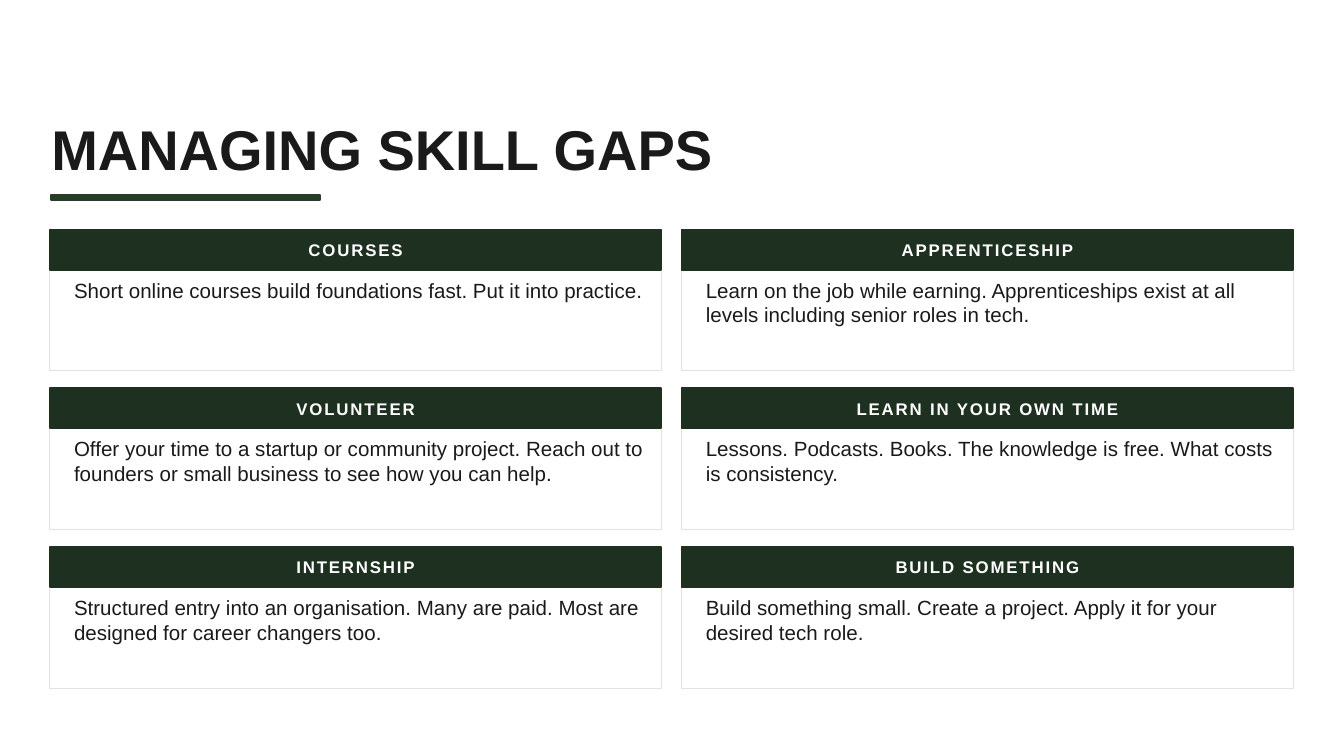
from dataclasses import dataclass

from pptx import Presentation
from pptx.dml.color import RGBColor
from pptx.enum.shapes import MSO_SHAPE as Shape
from pptx.enum.text import MSO_ANCHOR as Anchor, MSO_AUTO_SIZE as AutoSize, PP_ALIGN as Align
from pptx.util import Cm, Pt

TITLE = "MANAGING SKILL GAPS"
COLUMNS = [
    [
        ("COURSES", "Short online courses build foundations fast. Put it into practice."),
        ("VOLUNTEER", "Offer your time to a startup or community project. "
                      "Reach out to founders or small business to see how you can help."),
        ("INTERNSHIP", "Structured entry into an organisation. Many are paid. "
                       "Most are designed for career changers too."),
    ],
    [
        ("APPRENTICESHIP", "Learn on the job while earning. "
                           "Apprenticeships exist at all levels including senior roles in tech."),
        ("LEARN IN YOUR OWN TIME", "Lessons. Podcasts. Books. The knowledge is free. "
                                   "What costs is consistency."),
        ("BUILD SOMETHING", "Build something small. Create a project. "
                            "Apply it for your desired tech role."),
    ],
]


@dataclass(frozen=True)
class Theme:
    font: str = "Arial"
    ink: str = "1A1A1A"
    paper: str = "FFFFFF"
    accent: str = "273D27"
    header: str = "1E3020"
    border: str = "E0E4E0"
    title_size: float = 30
    heading_size: float = 9
    body_size: float = 11


THEME = Theme()
GRID_LEFT, GRID_TOP = 0.94, 4.34
CARD_WIDTH, CARD_HEIGHT = 11.56, 2.67
COLUMN_GAP, ROW_GAP = 0.38, 0.33
HEADER_HEIGHT = 0.76
HEADING_HEIGHT = 0.36
BODY_INDENT, BODY_DROP = 0.46, 0.91
BODY_WIDTH, BODY_HEIGHT = 10.85, 0.84


def add_block(slide, left, top, width, height, fill, line, line_width=1):
    block = slide.shapes.add_shape(Shape.RECTANGLE, Cm(left), Cm(top), Cm(width), Cm(height))
    block.shadow.inherit = False
    block.fill.solid()
    block.fill.fore_color.rgb = RGBColor.from_string(fill)
    block.line.color.rgb = RGBColor.from_string(line)
    block.line.width = Pt(line_width)


def add_text(slide, left, top, width, height, text, size, color,
             bold=False, align=Align.LEFT, anchor=Anchor.MIDDLE, spacing=0):
    frame = slide.shapes.add_textbox(Cm(left), Cm(top), Cm(width), Cm(height)).text_frame
    frame.word_wrap = True
    frame.auto_size = AutoSize.SHAPE_TO_FIT_TEXT
    frame.vertical_anchor = anchor
    frame.margin_left = frame.margin_right = frame.margin_top = frame.margin_bottom = 0
    paragraph = frame.paragraphs[0]
    paragraph.alignment = align
    run = paragraph.add_run()
    run.text = text
    run.font.name = THEME.font
    run.font.size = Pt(size)
    run.font.bold = bold
    run.font.color.rgb = RGBColor.from_string(color)
    if spacing:
        run.font._element.set("spc", str(spacing * 100))


def add_card(slide, left, top, heading, body):
    add_block(slide, left, top, CARD_WIDTH, CARD_HEIGHT, THEME.paper, THEME.border, 0.5)
    add_block(slide, left, top, CARD_WIDTH, HEADER_HEIGHT, THEME.header, THEME.header)
    heading_top = top + (HEADER_HEIGHT - HEADING_HEIGHT) / 2
    add_text(slide, left, heading_top, CARD_WIDTH, HEADING_HEIGHT, heading,
             THEME.heading_size, THEME.paper, bold=True, align=Align.CENTER, spacing=1)
    add_text(slide, left + BODY_INDENT, top + BODY_DROP, BODY_WIDTH, BODY_HEIGHT, body,
             THEME.body_size, THEME.ink, anchor=Anchor.TOP)


def main():
    deck = Presentation()
    deck.slide_width, deck.slide_height = Cm(25.4), Cm(14.29)
    slide = deck.slides.add_slide(deck.slide_layouts[6])

    add_text(slide, 0.97, 2.21, 22.35, 1.17, TITLE, THEME.title_size, THEME.ink, bold=True)
    add_block(slide, 0.97, 3.68, 5.08, 0.1, THEME.accent, THEME.accent)

    for column, cards in enumerate(COLUMNS):
        left = GRID_LEFT + column * (CARD_WIDTH + COLUMN_GAP)
        for row, (heading, body) in enumerate(cards):
            top = GRID_TOP + row * (CARD_HEIGHT + ROW_GAP)
            add_card(slide, left, top, heading, body)

    deck.save("out.pptx")


if __name__ == "__main__":
    main()
